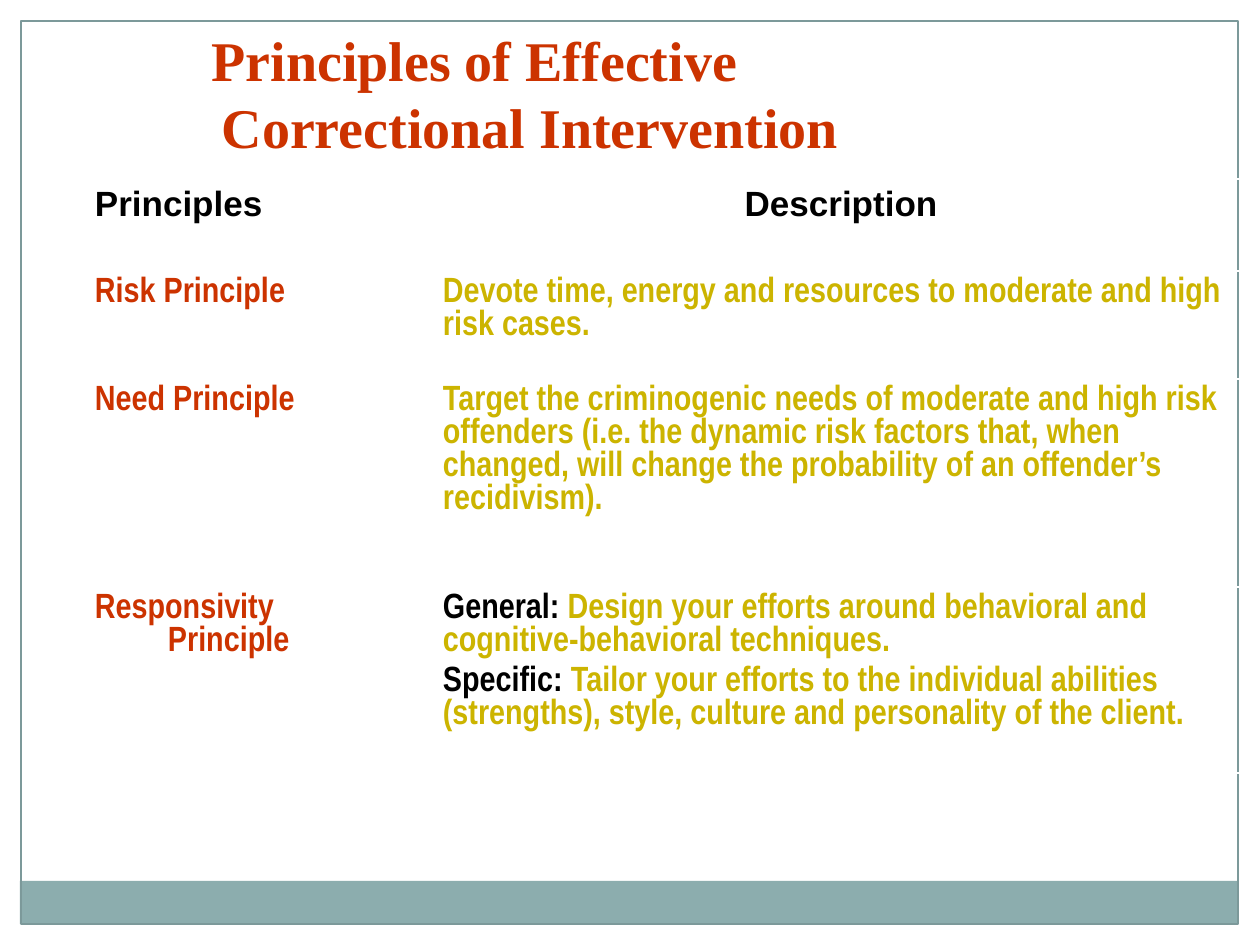
import pptx
import pptx.util
import pptx.dml.color
import pptx.enum.shapes
import pptx.enum.text
import pptx.oxml

PX = 914400 // 126
RED, GOLD, BLACK, WHITE = "CC3300", "CCB400", "000000", "FFFFFF"
TEAL, FRAME = "8CADAE", "7C999A"
ALIGN = pptx.enum.text.PP_ALIGN
NARROW = "Arial Narrow"

# Border strips at the top, right and left, then the footer band
BANDS = [((0, 0, 1260, 21), WHITE), ((1239, 0, 21, 945), WHITE),
         ((0, 0, 21, 945), WHITE), ((20, 881, 1217, 43), TEAL)]
HEADINGS = ("Principles", "Description ")
# Each principle: name, then paragraphs of (label, text)
PRINCIPLES = [
    ("Risk Principle",
     [("", "Devote time, energy and resources to moderate and high risk cases.")]),
    ("Need Principle",
     [("", "Target the criminogenic needs of moderate and high risk offenders "
           "(i.e. the dynamic risk factors that, when changed, will change the "
           "probability of an offender’s recidivism).")]),
    ("Responsivity\vPrinciple",
     [("General: ", "Design your efforts around behavioral and "
                    "cognitive-behavioral techniques."),
      ("Specific: ", "Tailor your efforts to the individual abilities "
                     "(strengths), style, culture and personality of the client.")]),
]


def px(n):
    return pptx.util.Emu(n * PX)


def rgb(value):
    return pptx.dml.color.RGBColor.from_string(value)


def set_font(font, name, size, color=None):
    font.name, font.size, font.bold = name, pptx.util.Pt(size), True
    if color:
        font.color.rgb = rgb(color)


def hang(p, margin, indent):
    """Set the left margin and the first line's offset from it."""
    pPr = p._p.get_or_add_pPr()
    pPr.set("marL", str(px(margin)))
    pPr.set("indent", str(px(indent)))


def add_rect(s, box, fill=None, line=None):
    sp = s.shapes.add_shape(pptx.enum.shapes.MSO_SHAPE.RECTANGLE, *map(px, box))
    sp.shadow.inherit = False
    if fill:
        sp.fill.solid()
        sp.fill.fore_color.rgb = rgb(fill)
    else:
        sp.fill.background()
    if line:
        sp.line.color.rgb = rgb(line)
        sp.line.width = pptx.util.Pt(0.75)
    else:
        sp.line.fill.background()


def add_title(s, text):
    sp = s.shapes.title
    sp.left, sp.top, sp.width, sp.height = map(px, (0, 30, 1061, 136))
    tf = sp.text_frame
    tf.word_wrap = True
    tf.auto_size = pptx.enum.text.MSO_AUTO_SIZE.NONE
    tf.vertical_anchor = pptx.enum.text.MSO_ANCHOR.BOTTOM
    p = tf.paragraphs[0]
    p.text = text
    p.alignment = ALIGN.LEFT
    hang(p, 209, -10)
    set_font(p.font, "Times New Roman", 32, RED)


def format_cell(cell):
    """Clear the fill, set the side margins and draw thin white borders."""
    cell.margin_left = cell.margin_right = px(11)
    tcPr = cell._tc.get_or_add_tcPr()
    for side in ("lnL", "lnR", "lnT", "lnB"):
        tcPr.append(pptx.oxml.parse_xml(
            f'<a:{side} xmlns:a="http://schemas.openxmlformats.org/drawingml/2006/main" '
            f'w="12700"><a:solidFill><a:srgbClr val="{WHITE}"/></a:solidFill></a:{side}>'))
    cell.fill.background()


def format_paragraph(p, font, color=None):
    p.space_before = pptx.util.Pt(4)
    set_font(p.font, font, 20, color)


def fill_name(cell, text):
    p = cell.text_frame.paragraphs[0]
    p.text = text
    hang(p, 73, -73)
    format_paragraph(p, NARROW, RED)


def fill_description(cell, paragraphs):
    tf = cell.text_frame
    for i, parts in enumerate(paragraphs):
        p = tf.add_paragraph() if i else tf.paragraphs[0]
        format_paragraph(p, NARROW)
        for text, color in zip(parts, (BLACK, GOLD)):
            if text:
                r = p.add_run()
                r.text = text
                r.font.color.rgb = rgb(color)


def add_principles_table(s):
    widths, heights = (348, 828), (92, 108, 208, 186)
    table = s.shapes.add_table(len(heights), len(widths), px(84), px(179),
                               px(sum(widths)), px(sum(heights))).table
    table.first_row = table.horz_banding = False
    for column, width in zip(table.columns, widths):
        column.width = px(width)
    for row, height in zip(table.rows, heights):
        row.height = px(height)
    for cell in table.iter_cells():
        format_cell(cell)
    for col, heading in enumerate(HEADINGS):
        p = table.cell(0, col).text_frame.paragraphs[0]
        p.text = heading
        p.alignment = (ALIGN.LEFT, ALIGN.CENTER)[col]
        format_paragraph(p, "Arial", BLACK)
    for row, (name, description) in enumerate(PRINCIPLES, 1):
        fill_name(table.cell(row, 0), name)
        fill_description(table.cell(row, 1), description)


def main():
    prs = pptx.Presentation()
    prs.slide_width, prs.slide_height = pptx.util.Inches(10), pptx.util.Inches(7.5)
    s = prs.slides.add_slide(prs.slide_layouts[5])
    for box, color in BANDS:
        add_rect(s, box, fill=color)
    add_rect(s, (21, 21, 1217, 903), line=FRAME)
    add_title(s, "Principles of Effective\vCorrectional Intervention")
    add_principles_table(s)
    prs.save("out.pptx")


if __name__ == "__main__":
    main()
